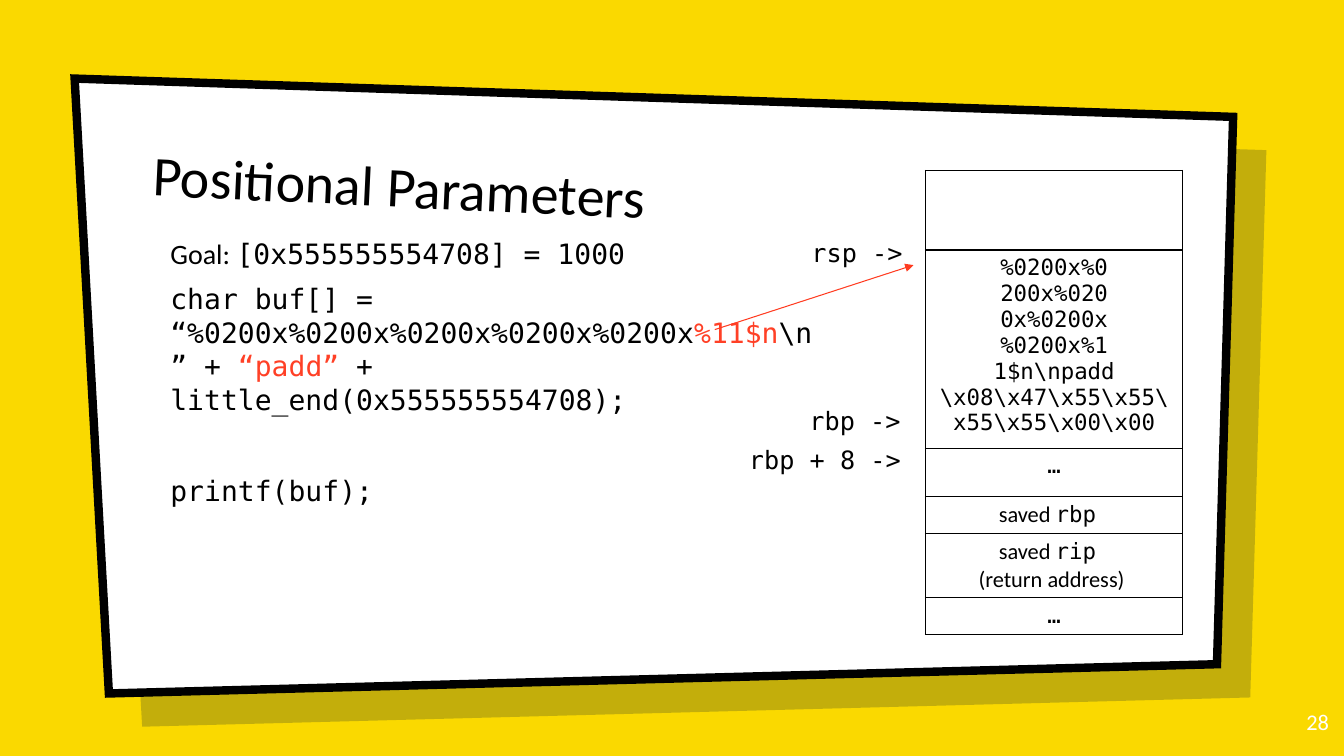
from lxml.etree import SubElement
from pptx import Presentation
from pptx.dml.color import RGBColor
from pptx.enum.shapes import MSO_CONNECTOR as Connector
from pptx.enum.text import MSO_ANCHOR as Anchor, PP_ALIGN as Align
from pptx.oxml import parse_xml
from pptx.oxml.ns import nsdecls, qn
from pptx.util import Inches, Pt

YELLOW = RGBColor(0xFA, 0xD9, 0x00)
NAVY = RGBColor(0x00, 0x19, 0x36)
WHITE = RGBColor(0xFF, 0xFF, 0xFF)
BLACK = RGBColor(0x00, 0x00, 0x00)
RED = RGBColor(0xFF, 0x40, 0x26)
ARROW_RED = RGBColor(0xFF, 0x3B, 0x20)
SANS = "Calibri"
MONO = "DejaVu Sans Mono"


def add_text(para, text, size=20, font=MONO, color=BLACK):
    span = para.add_run()
    span.text = text
    span.font.size = Pt(size)
    span.font.name = font
    span.font.color.rgb = color


class StackSlide:
    def __init__(self, page):
        self.page = page
        self.page.background.fill.solid()
        self.page.background.fill.fore_color.rgb = YELLOW

    def fill_frame(self, frame, paragraphs, align=Align.LEFT, gaps=(), **style):
        for index, spans in enumerate(paragraphs):
            para = frame.add_paragraph() if index else frame.paragraphs[0]
            para.alignment = align
            if index and gaps:
                para.space_before = Pt(gaps[index - 1])
            for text, changes in spans:
                add_text(para, text, **{**style, **changes})

    def text(self, left, top, width, height, paragraphs, insets=(0.1, 0.1),
             wrap=True, anchor=Anchor.TOP, rotation=0, **style):
        box = self.page.shapes.add_textbox(
            Inches(left), Inches(top), Inches(width), Inches(height))
        box.rotation = rotation
        frame = box.text_frame
        frame.word_wrap = wrap
        frame.vertical_anchor = anchor
        frame.margin_left = Inches(insets[0])
        frame.margin_right = Inches(0.1)
        frame.margin_top = frame.margin_bottom = Inches(insets[1])
        self.fill_frame(frame, paragraphs, **style)

    def panel(self, points, color, alpha=None, border=None):
        corners = [(Inches(x), Inches(y)) for x, y in points]
        builder = self.page.shapes.build_freeform(*corners[0], scale=1.0)
        builder.add_line_segments(corners[1:], close=True)
        shape = builder.convert_to_shape()
        shape.shadow.inherit = False
        shape.fill.solid()
        shape.fill.fore_color.rgb = color
        if alpha:
            tint = shape.fill._xPr.find(qn("a:solidFill"))[0]
            SubElement(tint, qn("a:alpha"), val=str(alpha * 1000))
        if border:
            shape.line.color.rgb = BLACK
            shape.line.width = Pt(border)
            SubElement(shape.line._get_or_add_ln(), qn("a:miter"), lim="800000")
        else:
            shape.line.fill.background()

    def arrow(self, start, end):
        line = self.page.shapes.add_connector(
            Connector.STRAIGHT, *map(Inches, start + end))
        line.line.color.rgb = ARROW_RED
        line.line.width = Pt(0.75)
        SubElement(line.line._get_or_add_ln(), qn("a:tailEnd"), type="triangle")
        SubElement(line._element.spPr, qn("a:effectLst"))

    def stack(self, left, top, width, height, rows):
        frame = self.page.shapes.add_table(
            len(rows), 1, Inches(left), Inches(top), Inches(width), Inches(height))
        table = frame.table
        table.first_row = table.horz_banding = False
        for index, (row_height, paragraphs) in enumerate(rows):
            table.rows[index].height = Inches(row_height)
            cell = table.cell(index, 0)
            properties = cell._tc.get_or_add_tcPr()
            for side in ("lnL", "lnR", "lnT", "lnB"):
                properties.append(parse_xml(
                    f'<a:{side} {nsdecls("a")} w="12700"><a:solidFill>'
                    f'<a:srgbClr val="{BLACK}"/></a:solidFill></a:{side}>'))
            cell.fill.background()
            self.fill_frame(cell.text_frame, paragraphs, align=Align.CENTER, size=16)
        frame.height = Inches(height)


def main():
    deck = Presentation()
    deck.slide_width, deck.slide_height = Inches(13.33), Inches(7.5)
    slide = StackSlide(deck.slides.add_slide(deck.slide_layouts[6]))

    sans, red = {"font": SANS}, {"color": RED}
    card = [(0.74, 0.78), (12.23, 1.16), (12.07, 6.59), (1.08, 6.88)]
    slide.panel([(x + 0.33, y + 0.33) for x, y in card], NAVY, alpha=22)
    slide.panel(card, WHITE, border=6)

    slide.text(1.42, 1.28, 10.25, 1.11, [[("Positional Parameters", {})]],
               anchor=Anchor.BOTTOM, rotation=2.7, size=40, font=SANS)
    slide.text(1.53, 2.25, 6.75, 4.21, [
        [("Goal: ", sans), ("[0x555555554708] = 1000", {})],
        [("char buf[] = “%0200x%0200x%0200x%0200x%0200x", {}), ("%11$n", red),
         ("\\n” + ", {}), ("“padd”", red),
         (" + little_end(0x555555554708);", {})],
        [("printf(buf);", {})],
    ], insets=(0.16, 0.1), gaps=(8, 41))
    slide.text(12.48, 6.93, 0.8, 0.57, [[("28", {})]],
               align=Align.RIGHT, size=16, font=SANS, color=WHITE)

    payload = ["%0200x%0", "200x%020", "0x%0200x", "%0200x%1",
               "1$n\\npadd \\x08\\x47\\x55\\x55\\x55\\x55\\x00\\x00"]
    slide.stack(9.18, 1.69, 2.55, 4.57, [
        (0.79, []),
        (1.2, [[(line, {})] for line in payload]),
        (0.48, [[("…", {})]]),
        (0.34, [[("saved ", sans), ("rbp ", {})]]),
        (0.6, [[("saved ", sans), ("rip ", {})], [("(return address) ", sans)]]),
        (0.34, [[("…", {})]]),
    ])

    for left, top, width, label in [(7.93, 3.97, 1.11, "rbp ->"),
                                    (7.95, 2.31, 1.11, "rsp ->"),
                                    (7.33, 4.36, 1.71, "rbp + 8 ->")]:
        slide.text(left, top, width, 0.4, [[(label, {})]],
                   insets=(0.1, 0.05), wrap=False, size=18)
    slide.arrow((7.09, 3.27), (9.06, 2.63))
    deck.save("out.pptx")


if __name__ == "__main__":
    main()
